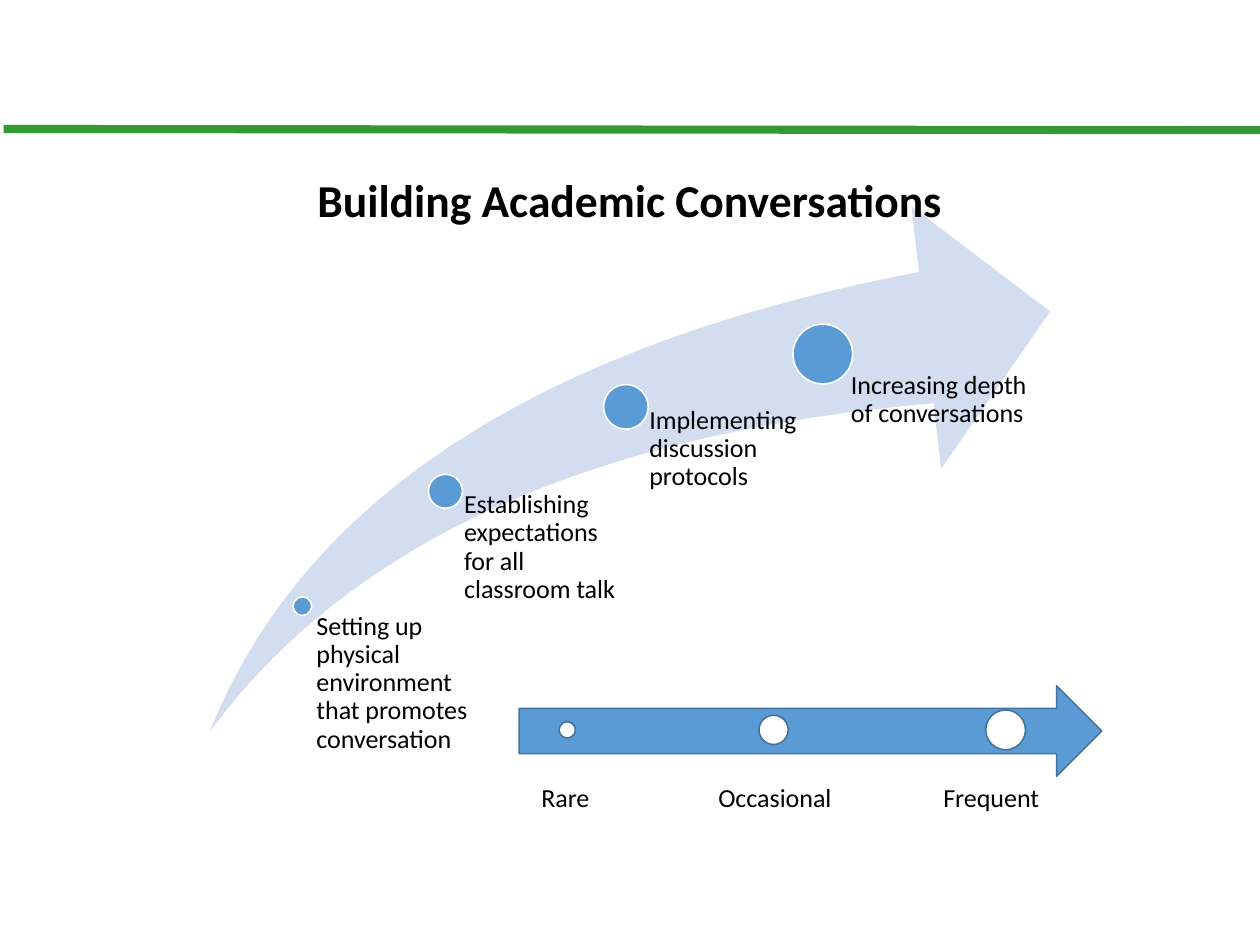
from collections import namedtuple
from dataclasses import dataclass

from lxml import etree
from pptx import Presentation
from pptx import util as u
from pptx.dml.color import RGBColor
from pptx.enum import shapes, text
from pptx.oxml import ns

Box = namedtuple("Box", "left top width height")
Stage = namedtuple("Stage", "label x y diameter text_x text_y text_width text_height inset")


@dataclass(frozen=True)
class Theme:
    """Colours and type sizes of the slide."""
    font: str = "Calibri"
    title_size: int = 28
    body_size: int = 16
    ink: str = "000000"
    white: str = "FFFFFF"
    rule: str = "339933"
    swoosh: str = "D2DEEF"
    accent: str = "5B9BD5"
    outline: str = "43739E"


THEME = Theme()
STAGES = [
    Stage("Setting up physical environment that promotes conversation",
          0.79, 3.41, 0.16, 0.82, 3.47, 1.48, 1.07, 0.09),
    Stage("Establishing expectations for all classroom talk",
          2.01, 2.43, 0.29, 2.02, 2.43, 1.5, 2.05, 0.15),
    Stage("Implementing discussion protocols",
          3.55, 1.71, 0.38, 3.55, 1.71, 1.5, 2.77, 0.2),
    Stage("Increasing depth of conversations",
          5.23, 1.26, 0.51, 5.2, 1.41, 1.93, 3.22, 0.27),
]
FREQUENCY_DOTS = [(0.41, 0.14), (2.17, 0.25), (4.15, 0.34)]
FREQUENCY_LABELS = ["Rare", "Occasional", "Frequent"]
FREQUENCY_TABS = [1.51, 3.43]


def color(value):
    """Turn a hex string into a colour."""
    return RGBColor.from_string(value)


def place(box):
    """Convert a box in inches to lengths."""
    return [u.Inches(value) for value in box]


def add_filled(slide, kind, box, fill, line=None):
    """Add a flat preset shape with an optional one-point outline."""
    shape = slide.shapes.add_shape(kind, *place(box))
    shape.shadow.inherit = False
    shape.fill.solid()
    shape.fill.fore_color.rgb = color(fill)
    if line:
        shape.line.color.rgb = color(line)
        shape.line.width = u.Pt(1)
    else:
        shape.line.fill.background()
    return shape


def add_dot(slide, x, y, diameter, fill, line):
    """Add a circle around a centre point."""
    box = Box(x - diameter / 2, y - diameter / 2, diameter, diameter)
    add_filled(slide, shapes.MSO_SHAPE.OVAL, box, fill, line)


def style_text(paragraph, size, bold=False):
    """Format every run of a paragraph."""
    for run in paragraph.runs:
        run.font.name = THEME.font
        run.font.size = u.Pt(size)
        run.font.bold = bold
        run.font.color.rgb = color(THEME.ink)


def add_text(slide, box, content):
    """Add a wrapped body text box and return its frame."""
    frame = slide.shapes.add_textbox(*place(box)).text_frame
    frame.word_wrap = True
    frame.text = content
    style_text(frame.paragraphs[0], THEME.body_size)
    return frame


def add_rule(slide, box):
    """Draw the green rule across the slide."""
    left, top, width, height = place(box)
    connector = slide.shapes.add_connector(
        shapes.MSO_CONNECTOR.STRAIGHT, left, top, left + width, top + height)
    connector.line.color.rgb = color(THEME.rule)
    connector.line.width = u.Pt(5)
    etree.SubElement(connector._element.spPr, ns.qn("a:effectLst"))


def add_title(slide, box, content):
    """Place the title in front of the shapes drawn so far."""
    title = slide.shapes.title
    title.left, title.top, title.width, title.height = place(box)
    frame = title.text_frame
    frame.text = content
    frame.word_wrap = True
    frame.auto_size = text.MSO_AUTO_SIZE.NONE
    frame.vertical_anchor = text.MSO_ANCHOR.TOP
    frame.paragraphs[0].alignment = text.PP_ALIGN.CENTER
    style_text(frame.paragraphs[0], THEME.title_size, bold=True)
    slide.shapes._spTree.append(title._element)


def add_stages(slide, box):
    """Draw the rising arrow with its labelled stages."""
    swoosh = add_filled(slide, shapes.MSO_SHAPE.SWOOSH_ARROW, box, THEME.swoosh)
    swoosh.adjustments[0] = swoosh.adjustments[1] = 0.25
    for stage in STAGES:
        add_dot(slide, box.left + stage.x, box.top + stage.y, stage.diameter,
                THEME.accent, THEME.white)
        label_box = Box(box.left + stage.text_x, box.top + stage.text_y,
                        stage.text_width, stage.text_height)
        frame = add_text(slide, label_box, stage.label)
        frame.margin_left = u.Inches(stage.inset)
        frame.margin_top = frame.margin_right = frame.margin_bottom = 0
        frame.paragraphs[0].line_spacing = 0.9


def add_frequency_scale(slide, box):
    """Draw the frequency arrow, its dots and the labels below."""
    add_filled(slide, shapes.MSO_SHAPE.RIGHT_ARROW, box, THEME.accent, THEME.outline)
    for x, diameter in FREQUENCY_DOTS:
        add_dot(slide, box.left + x, box.top + box.height / 2 - 0.01, diameter,
                THEME.white, THEME.outline)
    label_box = Box(box.left + 0.09, box.top + box.height, 4.6, 0.37)
    frame = add_text(slide, label_box, "\t".join(FREQUENCY_LABELS))
    properties = frame.paragraphs[0]._p.get_or_add_pPr()
    tabs = etree.SubElement(properties, ns.qn("a:tabLst"))
    for position in FREQUENCY_TABS:
        etree.SubElement(tabs, ns.qn("a:tab"), pos=str(u.Inches(position)), algn="l")


def main():
    """Build and save the slide."""
    presentation = Presentation()
    presentation.slide_width = u.Inches(10.75)
    presentation.slide_height = u.Inches(8)
    slide = presentation.slides.add_slide(presentation.slide_layouts.get_by_name("Title Only"))
    add_rule(slide, Box(0.03, 1.1, 10.72, 0.01))
    add_stages(slide, Box(1.79, 1.76, 7.17, 4.48))
    add_title(slide, Box(0.91, 1.42, 8.92, 0.57), "Building Academic Conversations")
    add_frequency_scale(slide, Box(4.43, 5.85, 4.97, 0.77))
    presentation.save("out.pptx")


if __name__ == "__main__":
    main()
